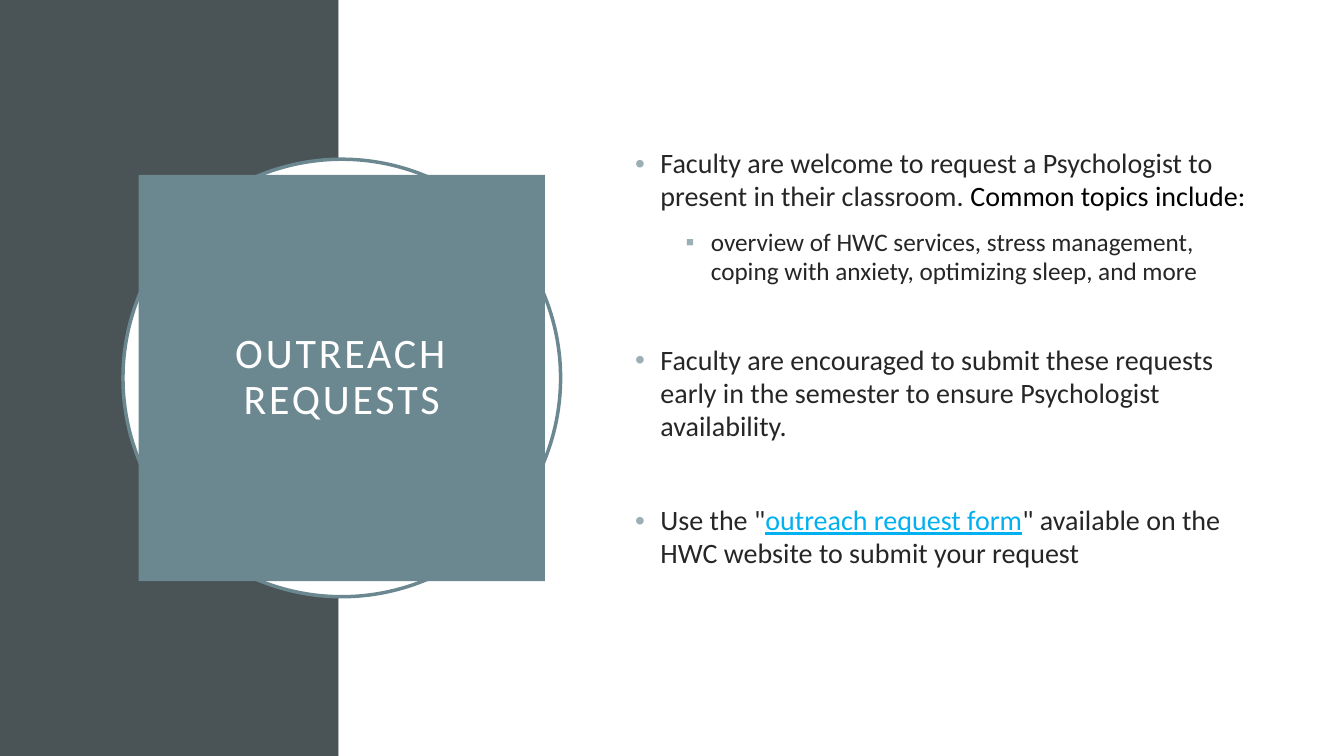
from pptx import Presentation
from pptx.dml.color import RGBColor
from pptx.enum.shapes import MSO_SHAPE as Shape
from pptx.enum.text import MSO_ANCHOR as Anchor, MSO_AUTO_SIZE as AutoSize, PP_ALIGN as Align
from pptx.oxml.ns import qn
from pptx.util import Inches, Pt
from lxml.etree import SubElement

TITLE = "OUTREACH REQUESTS"
BODY = [
    {"level": 0, "before": 10, "runs": [
        ("Faculty are welcome to request a Psychologist to present in their classroom. ", "text"),
        ("Common topics include:", "strong")]},
    {"level": 1, "before": 10, "runs": [
        ("overview of HWC services, stress management, coping with anxiety, "
         "optimizing sleep, and more", "text")]},
    {"level": 0, "before": 41, "runs": [
        ("Faculty are encouraged to submit these requests early in the semester "
         "to ensure Psychologist availability.", "text")]},
    {"level": 0, "before": 44, "runs": [
        ('Use the "', "text"),
        ("outreach request form", "link"),
        ('" available on the HWC website to submit your request', "text")]},
]
THEME = {
    "font": "Calibri", "title_size": 30, "body_sizes": (20, 18),
    "panel": "4A5356", "accent": "6B8891", "white": "FFFFFF",
    "text": "262626", "strong": "000000", "link": "00B0F0", "bullet": "9BAFB5",
}
BULLETS = (("•", 0.25), ("▪", 0.75))
HANGING = 0.25
WIDTH, HEIGHT = 13.33, 7.5
PANEL_WIDTH = 3.36
CENTER_X, CENTER_Y = 3.39, 3.75
CIRCLE, SQUARE = 4.34, 4.03


def color(name):
    return RGBColor.from_string(THEME[name])


def centered(size):
    return CENTER_X - size / 2, CENTER_Y - size / 2, size, size


def place(sp, left, top, width, height):
    sp.left, sp.top, sp.width, sp.height = map(Inches, (left, top, width, height))


def add_backdrop(slide, order, kind, box, fill, line=None):
    sp = slide.shapes.add_shape(kind, *map(Inches, box))
    sp.shadow.inherit = False
    sp.fill.solid()
    sp.fill.fore_color.rgb = color(fill)
    if line:
        sp.line.color.rgb = color(line)
        sp.line.width = Pt(2.5)
    else:
        sp.line.fill.background()
    slide.shapes._spTree.insert(2 + order, sp._element)


def add_text(p, text, size, fill, underline=None, spacing=None):
    r = p.add_run()
    r.text = text
    r.font.name = THEME["font"]
    r.font.size = Pt(size)
    r.font.color.rgb = color(fill)
    r.font.underline = underline
    if spacing:
        r._r.get_or_add_rPr().set("spc", str(spacing * 100))


def set_bullet(p, char, margin):
    pPr = p._p.get_or_add_pPr()
    pPr.set("marL", str(Inches(margin)))
    pPr.set("indent", str(-Inches(HANGING)))
    SubElement(SubElement(pPr, qn("a:buClr")), qn("a:srgbClr"), val=THEME["bullet"])
    SubElement(pPr, qn("a:buFont"), typeface="Arial")
    SubElement(pPr, qn("a:buChar"), char=char)


def fill_title(sp):
    place(sp, *centered(SQUARE))
    sp.fill.solid()
    sp.fill.fore_color.rgb = color("accent")
    tf = sp.text_frame
    tf.auto_size, tf.word_wrap = AutoSize.NONE, True
    tf.vertical_anchor = Anchor.MIDDLE
    tf.margin_left = tf.margin_right = tf.margin_top = tf.margin_bottom = Inches(0.2)
    p = tf.paragraphs[0]
    p.alignment, p.line_spacing = Align.CENTER, 0.9
    add_text(p, TITLE, THEME["title_size"], "white", spacing=2)


def fill_body(sp):
    place(sp, 6.2, 1.04, 6.37, 5.44)
    tf = sp.text_frame
    tf.auto_size, tf.word_wrap = AutoSize.NONE, True
    tf.vertical_anchor = Anchor.MIDDLE
    tf.margin_bottom = Inches(0.45)
    for i, item in enumerate(BODY):
        p = tf.add_paragraph() if i else tf.paragraphs[0]
        level = item["level"]
        p.level, p.line_spacing = level, 0.98
        p.space_before, p.space_after = Pt(item["before"]), Pt(0)
        set_bullet(p, *BULLETS[level])
        for text, role in item["runs"]:
            add_text(p, text, THEME["body_sizes"][level], role, underline=role == "link" or None)


def main():
    prs = Presentation()
    prs.slide_width, prs.slide_height = Inches(WIDTH), Inches(HEIGHT)
    slide = prs.slides.add_slide(prs.slide_layouts[1])
    backdrops = [
        (Shape.RECTANGLE, (0, 0, PANEL_WIDTH, HEIGHT), "panel"),
        (Shape.RECTANGLE, (PANEL_WIDTH, 0, WIDTH - PANEL_WIDTH, HEIGHT), "white"),
        (Shape.OVAL, centered(CIRCLE), "white", "accent"),
    ]
    for order, backdrop in enumerate(backdrops):
        add_backdrop(slide, order, *backdrop)
    fill_title(slide.shapes.title)
    fill_body(slide.placeholders[1])
    prs.save("out.pptx")


if __name__ == "__main__":
    main()
